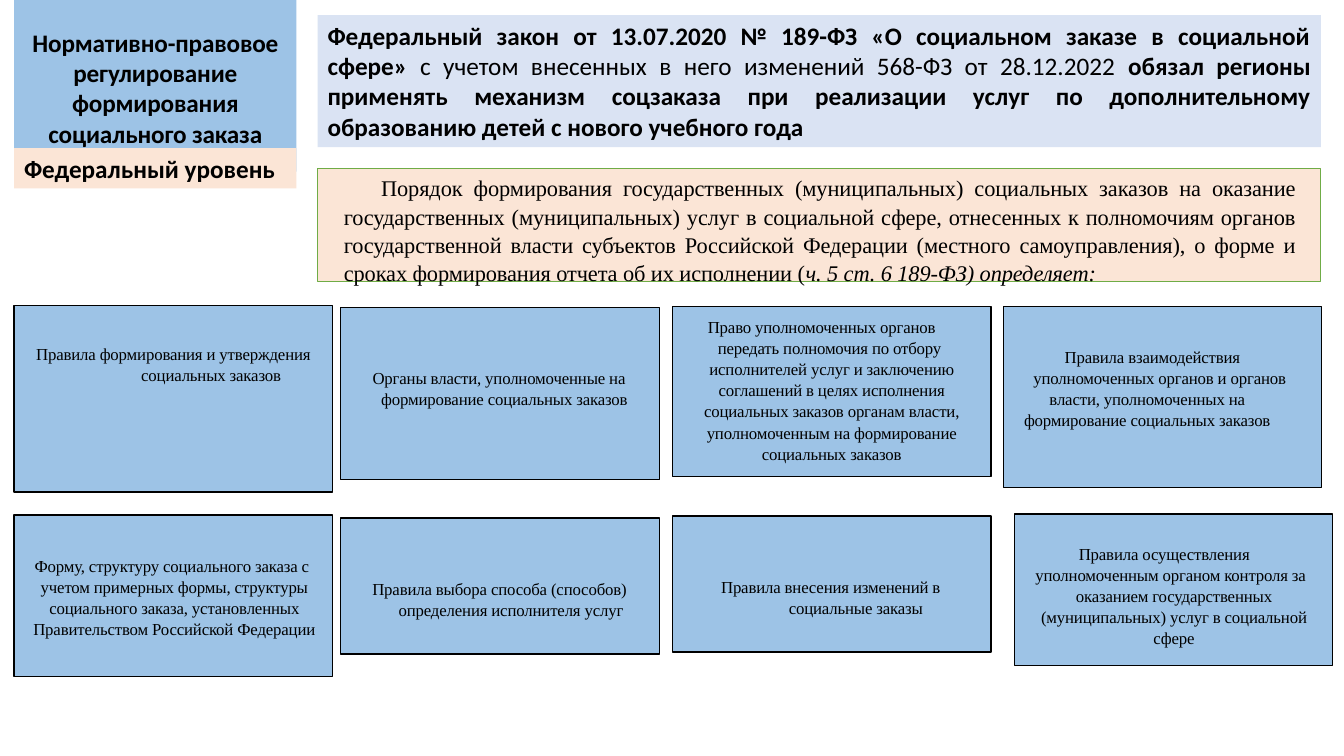
from pptx import Presentation
from pptx import util as u
from pptx.dml.color import RGBColor
from pptx.enum import shapes, text

COLORS = {"blue": "9DC3E6", "pale": "DAE3F3", "peach": "FBE5D6",
          "black": "000000", "green": "6FAC46"}
LEFT, CENTER, JUSTIFY = text.PP_ALIGN.LEFT, text.PP_ALIGN.CENTER, text.PP_ALIGN.JUSTIFY
SERIF = "Times New Roman"


def style_box(box, fill, line=None, width=0.96, insets=(0.1, 0.05, 0.1, 0.05)):
    """Fill and outline a box; insets run left, top, right, bottom."""
    box.fill.solid()
    box.fill.fore_color.rgb = RGBColor.from_string(COLORS[fill])
    if line:
        box.line.color.rgb = RGBColor.from_string(COLORS[line])
        box.line.width = u.Pt(width)
    else:
        box.line.fill.background()
    frame = box.text_frame
    frame.word_wrap = True
    frame.vertical_anchor = text.MSO_ANCHOR.TOP
    (frame.margin_left, frame.margin_top,
     frame.margin_right, frame.margin_bottom) = map(u.Inches, insets)


def write(para, spans, size, font, align, indent=(0, 0), spacing=0):
    """Spans are (text, style); style holds b for bold and i for italic."""
    para.alignment = align
    para.space_before = u.Pt(0)
    para.line_spacing = 1.05 if font == SERIF else 1.0
    props = para._p.get_or_add_pPr()
    props.set("marL", str(u.Inches(indent[0])))
    props.set("indent", str(u.Inches(indent[1])))
    for words, style in spans:
        span = para.add_run()
        span.text = words
        span.font.size = u.Pt(size)
        span.font.name = font
        span.font.bold = "b" in style
        span.font.italic = "i" in style
        span.font.color.rgb = RGBColor.from_string(COLORS["black"])
        span._r.get_or_add_rPr().set("spc", str(spacing))


deck = Presentation()
deck.slide_width, deck.slide_height = u.Inches(13.33), u.Inches(7.5)
slide = deck.slides.add_slide(deck.slide_layouts[5])

# Title
title = slide.shapes.title
title.left, title.top, title.width, title.height = map(u.Inches, (0.14, 0.16, 2.8, 1.29))
style_box(title, "blue", insets=(0, 0.23, 0, 0.1))
title.text_frame.vertical_anchor = text.MSO_ANCHOR.MIDDLE
title.text_frame.auto_size = text.MSO_AUTO_SIZE.SHAPE_TO_FIT_TEXT
write(title.text_frame.paragraphs[0],
      [("Нормативно-правовое регулирование формирования социального заказа", "b")],
      18, "Calibri", CENTER, spacing=-10)

# Cards: left, top, height, top inset, right inset, paragraphs (align, indent, text)
CARD_WIDTH = 3.16
cards = [
    (0.14, 3.03, 1.85, 0.37, 0.12, [
        (CENTER, (0.87, -0.75), "Правила формирования и утверждения социальных заказов")]),
    (3.38, 3.05, 1.71, 0.59, 0.24, [
        (CENTER, (0.33, -0.11),
         "Органы власти, уполномоченные на формирование социальных заказов")]),
    (6.67, 3.04, 1.69, 0.09, 0.29, [
        (LEFT, (0.45, -0.1), "Право уполномоченных органов передать полномочия по отбору"),
        (CENTER, (0.29, 0),
         "исполнителей услуг и заключению соглашений в целях исполнения социальных "
         "заказов органам власти, уполномоченным на формирование социальных заказов")]),
    (9.95, 3.04, 1.8, 0.39, 0.3, [
        (LEFT, (0.3, 0.31), "Правила взаимодействия уполномоченных органов и органов"),
        (CENTER, (0, 0), "власти, уполномоченных на"),
        (CENTER, (0, 0), "формирование социальных заказов")]),
    (0.14, 5.11, 1.6, 0.39, 0.13, [
        (CENTER, (0.15, -0.05),
         "Форму, структуру социального заказа с учетом примерных формы, структуры "
         "социального заказа, установленных Правительством Российской Федерации")]),
    (3.38, 5.14, 1.35, 0.59, 0.23, [
        (CENTER, (0.45, -0.23),
         "Правила выбора способа (способов) определения исполнителя услуг")]),
    (6.67, 5.12, 1.35, 0.59, 0.42, [
        (CENTER, (0.9, -0.5), "Правила внесения изменений в социальные заказы")]),
    (10.06, 5.1, 1.5, 0.28, 0.22, [
        (LEFT, (0.21, 0.43), "Правила осуществления уполномоченным органом контроля за"),
        (CENTER, (0.23, 0),
         "оказанием государственных (муниципальных) услуг в социальной сфере")]),
]
for left, top, height, inset_top, inset_right, paragraphs in cards:
    card = slide.shapes.add_shape(shapes.MSO_SHAPE.RECTANGLE,
                                  *map(u.Inches, (left, top, CARD_WIDTH, height)))
    card.shadow.inherit = False
    style_box(card, "blue", "black", insets=(0, inset_top, inset_right, 0))
    for number, (align, indent, words) in enumerate(paragraphs):
        frame = card.text_frame
        para = frame.add_paragraph() if number else frame.paragraphs[0]
        write(para, [(words, "")], 12, SERIF, align, indent, -10)

# Level label and law summary
banners = [
    ((0.14, 1.47, 2.8, 0.4), "peach", [("Федеральный уровень", "b")]),
    ((3.15, 0.15, 9.95, 1.31), "pale", [
        ("Федеральный закон от 13.07.2020 № 189-ФЗ «О социальном заказе в социальной сфере»", "b"),
        (" с учетом внесенных в него изменений 568-ФЗ от 28.12.2022 ", ""),
        ("обязал регионы применять механизм соцзаказа при реализации услуг по "
         "дополнительному образованию детей с нового учебного года", "b")]),
]
for place, fill, spans in banners:
    banner = slide.shapes.add_shape(shapes.MSO_SHAPE.RECTANGLE, *map(u.Inches, place))
    banner.shadow.inherit = False
    style_box(banner, fill)
    write(banner.text_frame.paragraphs[0], spans, 18, "Calibri", JUSTIFY)

# Procedure statement
procedure = slide.shapes.add_shape(shapes.MSO_SHAPE.RECTANGLE,
                                   *map(u.Inches, (3.15, 1.67, 9.95, 1.12)))
procedure.shadow.inherit = False
style_box(procedure, "peach", "green", 0.48, (0, 0.05, 0.24, 0))
write(procedure.text_frame.paragraphs[0], [
    ("Порядок формирования государственных (муниципальных) социальных заказов на оказание "
     "государственных (муниципальных) услуг в социальной сфере, отнесенных к полномочиям "
     "органов государственной власти субъектов Российской Федерации (местного "
     "самоуправления), о форме и сроках формирования отчета об их исполнении (", ""),
    ("ч. 5 ст. 6 189-ФЗ) определяет:", "i")],
    16, SERIF, JUSTIFY, (0.26, 0.37), -5)

deck.save("out.pptx")
